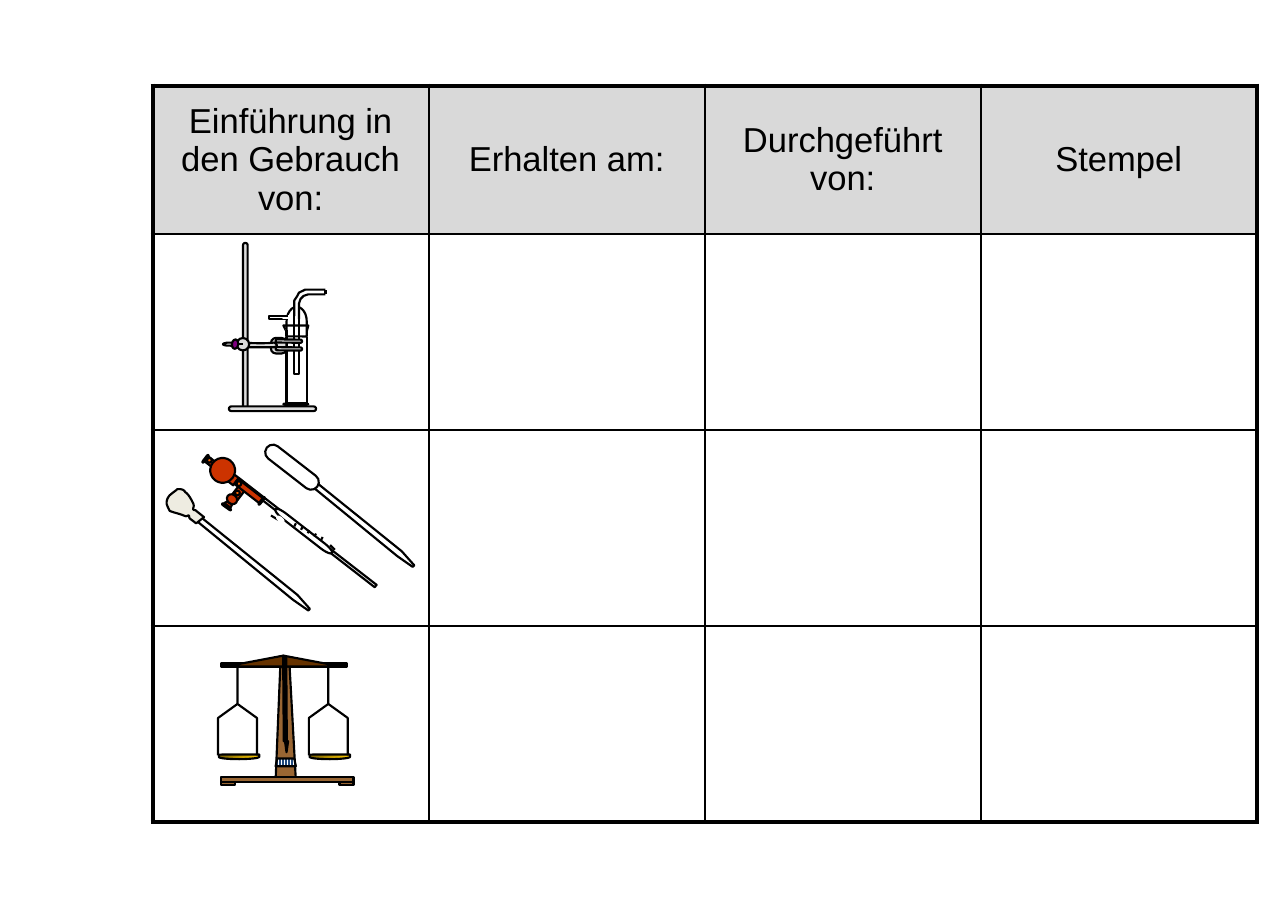
from lxml import etree
from pptx import Presentation
from pptx.dml.color import RGBColor
from pptx.enum.dml import MSO_PATTERN
from pptx.enum.shapes import MSO_CONNECTOR, MSO_SHAPE
from pptx.enum.text import MSO_ANCHOR, PP_ALIGN
from pptx.oxml.ns import qn
from pptx.util import Inches, Pt

BLACK = RGBColor(0, 0, 0)
WHITE = RGBColor(255, 255, 255)
HEADER_GREY = RGBColor(0xD9, 0xD9, 0xD9)
BLUE = RGBColor(0x1F, 0x49, 0x7D)
GOLD = RGBColor(0xFF, 0xCC, 0x00)
DARK_GOLD = RGBColor(0x76, 0x5E, 0x00)

# Styles: fill colour, line colour
CLEAR = (None, BLACK)
GLASS = (WHITE, BLACK)
MASK = (WHITE, WHITE)
INK = (BLACK, BLACK)
STEEL = (RGBColor(0xDD, 0xDD, 0xDD), BLACK)
KNOB = (RGBColor(0x80, 0, 0x80), BLACK)
RED = (RGBColor(0xCC, 0x33, 0), BLACK)
VALVE = (RGBColor(0xFF, 0x66, 0), BLACK)
BULB = (RGBColor(0xEE, 0xEC, 0xE1), BLACK)
WOOD = (RGBColor(0x99, 0x66, 0x33), BLACK)
DARK_WOOD = (RGBColor(0x66, 0x33, 0), BLACK)
BRASS = ("gradient", BLACK)
SCALE = ("stripes", BLACK)

RECT, ROUND, OVAL = MSO_SHAPE.RECTANGLE, MSO_SHAPE.ROUNDED_RECTANGLE, MSO_SHAPE.OVAL
PILL, DELAY = MSO_SHAPE.FLOWCHART_TERMINATOR, MSO_SHAPE.FLOWCHART_DELAY
WEDGE, LINE, PATH, LOOP = MSO_SHAPE.RIGHT_TRIANGLE, "line", "open path", "closed path"

HEADERS = ["Einführung in den Gebrauch von:", "Erhalten am:", "Durchgeführt von:", "Stempel"]
TABLE_LEFT, TABLE_TOP, COLUMN_WIDTH = 98, 55, 177.25
ROW_HEIGHTS = [95, 126, 126, 126]

# All places are on a grid of 1/100 inch.
# Parts: kind, place, style, then optional rotation and corner rounding.
# Paths hold points (x, y) and curves (two handles and an end point).
GAS_STAND = [
    (RECT, (184, 213, 13, 46), CLEAR),
    (PILL, (182, 259, 16, 1), CLEAR),
    (LOOP, [(182, 209), (184, 213), (197, 213), (198, 209)], CLEAR),
    (RECT, (184, 212, 13, 4), MASK),
    (LINE, (184, 212, 184, 216), CLEAR),
    (LINE, (197, 213, 197, 216), CLEAR),
    (DELAY, (181, 200, 19, 13), CLEAR, 270.4),
    (RECT, (173, 203, 11, 2), CLEAR),
    (RECT, (182, 203, 7, 1), MASK),
    (RECT, (189, 199, 3, 41), CLEAR),
    (RECT, (189, 195, 3, 5), MASK),
    (LINE, (189, 195, 189, 201), CLEAR),
    (LINE, (192, 195, 192, 202), CLEAR),
    (LINE, (181, 203, 185, 203), CLEAR),
    (PATH, [(189, 203), (189, 193), (191, 190), (192, 188), (196, 186), (199, 186),
            (209, 186)], CLEAR),
    (PATH, [(192, 205), (192, 195), (193, 192), (195, 190), (198, 189), (201, 189),
            (209, 189)], CLEAR),
    (LINE, (209, 189, 209, 186), CLEAR),
    (ROUND, (104, 208, 107, 3), STEEL, 90, 0.5),
    (ROUND, (147, 261, 56, 3), STEEL, 0, 0.5),
    (ROUND, (174, 217, 10, 10), STEEL, 0.7, 0.32),
    (ROUND, (177, 223, 17, 2), STEEL, 0.7, 0.5),
    (ROUND, (177, 218, 17, 2), STEEL, 0.7, 0.5),
    (LOOP, [(176, 220), (170, 221, 156, 220, 151, 220), (146, 220),
            (140, 221, 145, 222, 146, 222), (148, 222), (151, 223),
            (156, 223, 172, 223, 176, 223), (180, 222, 176, 220, 176, 220)], STEEL),
    (ROUND, (152, 217, 8, 8), STEEL, 0, 0.5),
    (LINE, (156, 221, 153, 221), CLEAR),
    (OVAL, (149, 218, 4, 6), KNOB, 6.4),
]

PIPETTES = [
    (RECT, (196, 286, 2, 112), GLASS, 307.8),
    (PILL, (172, 339, 46, 4), GLASS, 217.8),
    (RECT, (214, 350, 1, 3), MASK, 307.8),
    (LINE, (212, 350, 215, 353), CLEAR),
    (RECT, (177, 331, 1, 3), MASK, 307.8),
    (LINE, (174, 331, 179, 334), CLEAR),
    *[(LINE, (189 + 4.3 * mark, 338 + 2.2 * mark, 190 + 4.3 * mark, 336 + 2.2 * mark), CLEAR)
      for mark in range(5)],
    (OVAL, (179, 331, 2, 5), MASK, 307.8),
    (RECT, (149, 314, 8, 5), RED, 307.7),
    (LOOP, [(148, 326), (149, 324), (146, 322), (144, 323)], RED),
    (RECT, (133, 293, 4, 7), RED, 307.7),
    (RECT, (147, 306, 6, 4), RED, 307.7),
    (RECT, (158, 305, 4, 21), RED, 307.7),
    (OVAL, (146, 317, 6, 7), RED, 307.7),
    (OVAL, (135, 294, 16, 16), RED, 307.7),
    *[(OVAL, (left, top, 3, 3), VALVE, 307.7)
      for left, top in [(133, 294), (151, 315), (152, 309)]],
    (PILL, (129, 294, 6, 1), RED, 307.7),
    (PILL, (165, 321, 6, 1), RED, 307.7),
    (PILL, (142, 325, 7, 1), RED, 36),
    *[(LOOP, [(x, y), (x + 66, y + 54), (x + 76, y + 61), (x + 77, y + 60),
              (x + 69, y + 51), (x + 2, y - 3)], GLASS)
      for x, y in [(122, 331), (189, 303)]],
    (LOOP, [(126, 336), (122, 333), (121, 332, 122, 331, 121, 331),
            (120, 331, 120, 332, 118, 331), (116, 330, 111, 329, 109, 328),
            (108, 326, 107, 324, 107, 323), (107, 321, 108, 319, 109, 318),
            (110, 317, 113, 315, 114, 314), (116, 314, 118, 314, 119, 316),
            (121, 317, 123, 321, 124, 323), (125, 325, 124, 326, 124, 327),
            (125, 328, 125, 327, 126, 328), (131, 332)], BULB),
    (ROUND, (167, 295, 41, 10), GLASS, 37.8, 0.5),
]

PANS = [140, 198.3]
BALANCE = [
    (RECT, (142, 426, 81, 2), DARK_WOOD),
    (LOOP, [(190, 501), (186, 428), (180, 428), (177, 501)], WOOD),
    (LOOP, [(190, 492), (189, 487), (178, 487), (177, 492)], SCALE),
    (WEDGE, (182, 421, 37, 7), DARK_WOOD),
    (WEDGE, (145, 421, 37, 7), DARK_WOOD, "mirror"),
    (MSO_SHAPE.FLOWCHART_MERGE, (183, 476, 2, 7), INK),
    (RECT, (182, 422, 2, 54), INK, 359.6),
    *[(DELAY, (x + 12, 473, 3, 26), BRASS, 89.8) for x in PANS],
    *[(PATH, [(x, 485), (x, 461), (x + 12.5, 452), (x + 12.5, 426), (x + 12.5, 452),
              (x + 25, 461), (x + 25, 485)], CLEAR) for x in PANS],
    (RECT, (142, 499, 85, 3), WOOD),
    *[(RECT, (x, 502, 9, 2), WOOD) for x in (142, 218)],
]


def grid(value):
    return Inches(value / 100)


def flatten(points, steps=6):
    """Replace each curve by short straight steps."""
    flat = []
    for point in points:
        if len(point) == 2:
            flat.append(point)
            continue
        (x0, y0), (x1, y1, x2, y2, x3, y3) = flat[-1], point
        for t in (step / steps for step in range(1, steps + 1)):
            a, b, c, d = (1 - t) ** 3, 3 * t * (1 - t) ** 2, 3 * t * t * (1 - t), t ** 3
            flat.append((a * x0 + b * x1 + c * x2 + d * x3, a * y0 + b * y1 + c * y2 + d * y3))
    return [(grid(x), grid(y)) for x, y in flat]


def paint(fill, colour):
    if colour is None:
        fill.background()
    elif colour == "gradient":
        fill.gradient()
        fill.gradient_angle = 270
        for stop, shade in zip(fill.gradient_stops, (GOLD, DARK_GOLD)):
            stop.color.rgb = shade
    elif colour == "stripes":
        fill.patterned()
        fill.pattern = MSO_PATTERN.DARK_VERTICAL
        fill.fore_color.rgb, fill.back_color.rgb = BLUE, WHITE
    else:
        fill.solid()
        fill.fore_color.rgb = colour


def draw(group, kind, place, style, rotation=0, rounding=None):
    if kind == LINE:
        part = group.shapes.add_connector(MSO_CONNECTOR.STRAIGHT, *map(grid, place))
    elif kind in (PATH, LOOP):
        start, *rest = flatten(place)
        builder = group.shapes.build_freeform(*start, scale=1.0)
        part = builder.add_line_segments(rest, close=kind == LOOP).convert_to_shape()
    else:
        part = group.shapes.add_shape(kind, *map(grid, place))
        if rotation == "mirror":
            part._element.spPr.xfrm.set("flipH", "1")
        else:
            part.rotation = rotation
        if rounding is not None:
            part.adjustments[0] = rounding
    part.line.color.rgb = style[1]
    part.line.width = Pt(1)
    if kind == LINE:
        etree.SubElement(part._element.spPr, qn("a:effectLst"))
    else:
        part.shadow.inherit = False
        paint(part.fill, style[0])


def set_borders(cell, widths):
    properties = cell._tc.get_or_add_tcPr()
    for index, (side, width) in enumerate(widths.items()):
        border = etree.Element(qn(f"a:ln{side}"), w=str(Pt(width)))
        fill = etree.SubElement(border, qn("a:solidFill"))
        etree.SubElement(fill, qn("a:srgbClr"), val=str(BLACK))
        properties.insert(index, border)


def add_record_table(page):
    rows, columns = len(ROW_HEIGHTS), len(HEADERS)
    table = page.shapes.add_table(
        rows, columns, grid(TABLE_LEFT), grid(TABLE_TOP),
        grid(COLUMN_WIDTH * columns), grid(sum(ROW_HEIGHTS))).table
    table.first_row = table.horz_banding = False
    for column in table.columns:
        column.width = grid(COLUMN_WIDTH)
    for r, height in enumerate(ROW_HEIGHTS):
        table.rows[r].height = grid(height)
        for c, header in enumerate(HEADERS):
            cell = table.cell(r, c)
            paint(cell.fill, None if r else HEADER_GREY)
            edges = {"L": c == 0, "R": c == columns - 1, "T": r == 0, "B": r == rows - 1}
            set_borders(cell, {side: 2.25 if outer else 1 for side, outer in edges.items()})
            if r == 0:
                cell.text = header
                cell.vertical_anchor = MSO_ANCHOR.MIDDLE
                para = cell.text_frame.paragraphs[0]
                para.alignment = PP_ALIGN.CENTER
                para.font.name, para.font.size = "Arial", Pt(16)
                para.font.color.rgb = BLACK


def main():
    deck = Presentation()
    deck.slide_width, deck.slide_height = Inches(8.27), Inches(5.83)
    page = deck.slides.add_slide(deck.slide_layouts[6])
    add_record_table(page)
    for drawing in (GAS_STAND, PIPETTES, BALANCE):
        group = page.shapes.add_group_shape()
        for part in drawing:
            draw(group, *part)
    deck.save("out.pptx")


if __name__ == "__main__":
    main()
